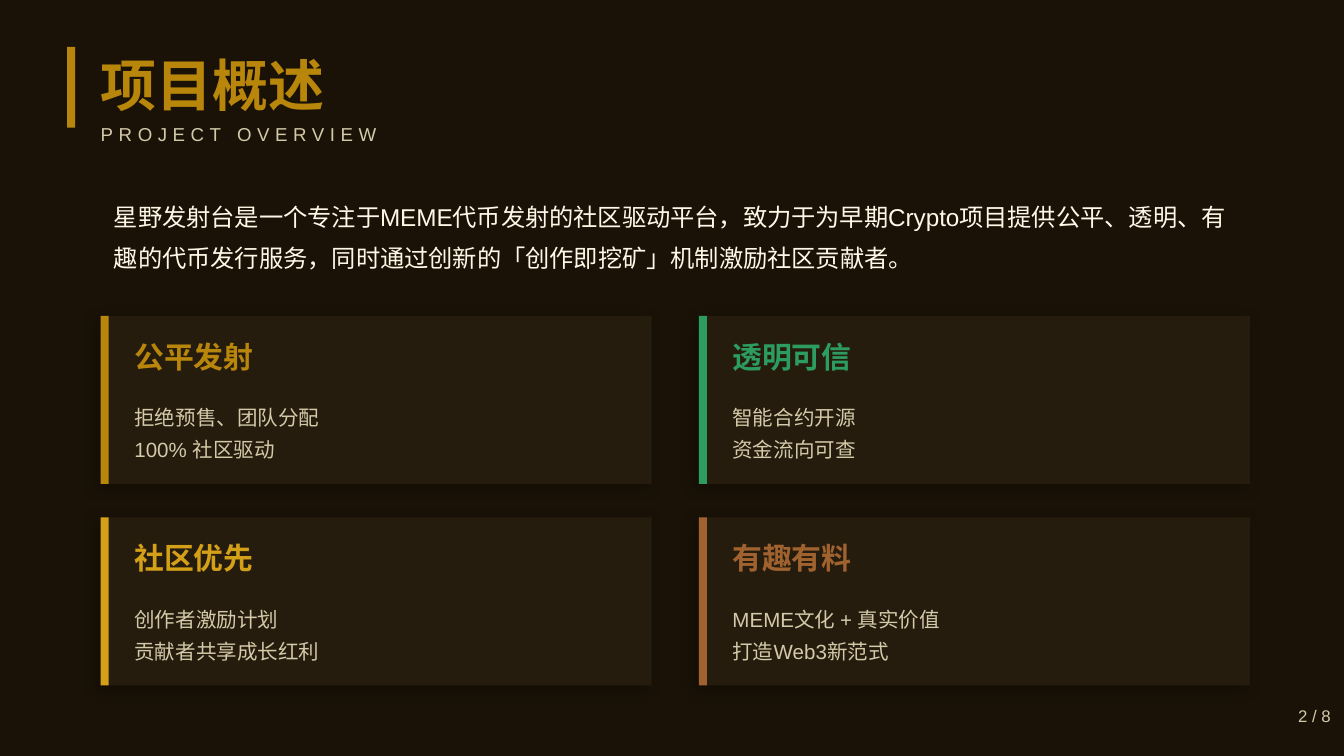
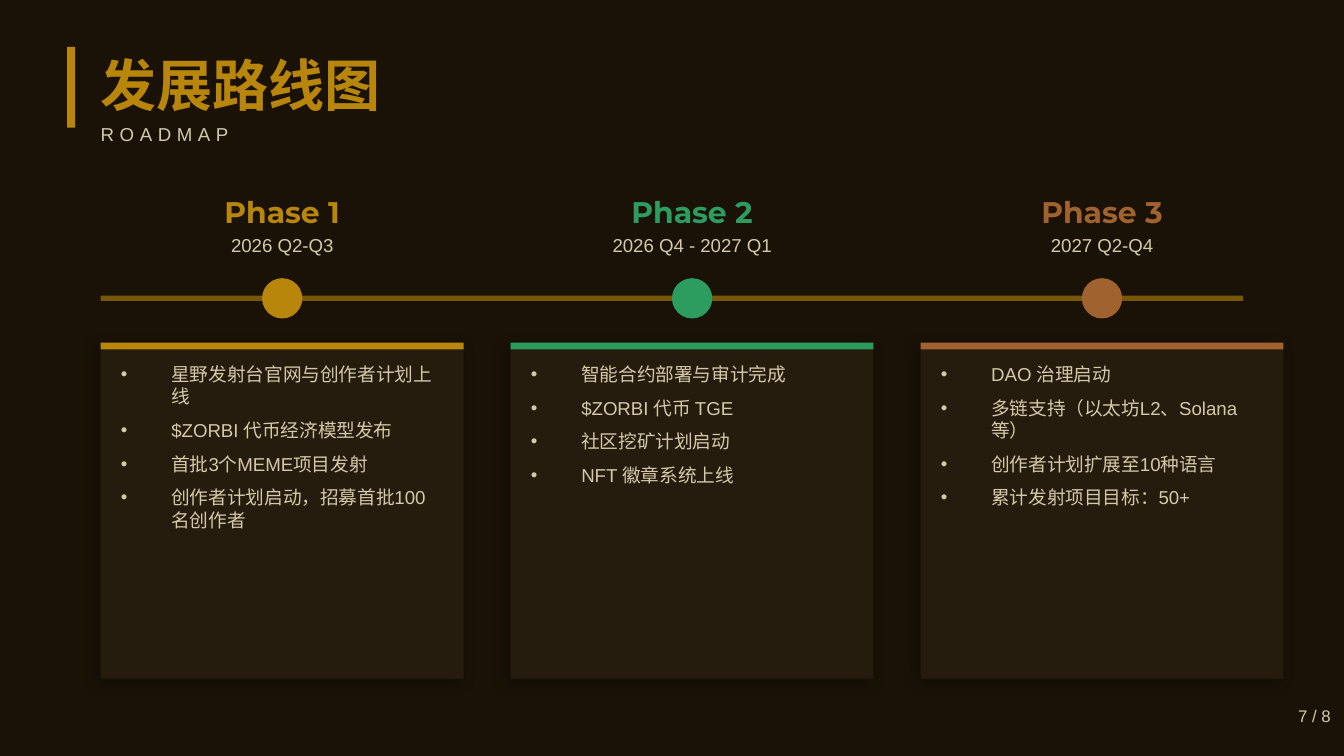
from lxml import etree
from pptx import Presentation
from pptx.dml.color import RGBColor
from pptx.enum.shapes import MSO_SHAPE
from pptx.enum.text import MSO_ANCHOR, MSO_AUTO_SIZE, PP_ALIGN
from pptx.oxml.ns import qn
from pptx.util import Inches, Pt

RECTANGLE, OVAL = MSO_SHAPE.RECTANGLE, MSO_SHAPE.OVAL
TOP, MIDDLE = MSO_ANCHOR.TOP, MSO_ANCHOR.MIDDLE
LEFT, CENTER, RIGHT = PP_ALIGN.LEFT, PP_ALIGN.CENTER, PP_ALIGN.RIGHT
NO_AUTOFIT = MSO_AUTO_SIZE.NONE

COLORS = {
    "background": "1A1207",
    "card": "251C0E",
    "gold": "B8860B",
    "amber": "D4A017",
    "green": "2D9D5F",
    "copper": "A0622E",
    "sand": "D4C9A8",
    "cream": "FFF8E7",
    "shadow": "000000",
}
HEADING_FONT, BODY_FONT = "Montserrat", "Arial"
LEFT_EDGE = 0.75
PAGE_WIDTH = 10


def add_text(page, text, at, size=10, color="sand", font=BODY_FONT, bold=False,
             align=LEFT, anchor=MIDDLE, inset=0, line_spacing=1.0, space_after=0,
             letter_spacing=0, bullet=None, placeholder=None):
    box = placeholder
    if box is None:
        box = page.shapes.add_textbox(0, 0, 0, 0)
    else:
        page.shapes._spTree.append(box._element)
    box.left, box.top, box.width, box.height = [Inches(value) for value in at]
    frame = box.text_frame
    frame.word_wrap = True
    frame.auto_size = NO_AUTOFIT
    frame.vertical_anchor = anchor
    frame.margin_left = frame.margin_right = Inches(inset)
    frame.margin_top = frame.margin_bottom = Inches(inset / 2)
    for index, line in enumerate(text.split("\n")):
        para = frame.paragraphs[0] if index == 0 else frame.add_paragraph()
        if bullet:
            properties = para._p.get_or_add_pPr()
            properties.set("marL", str(Pt(27)))
            properties.set("indent", str(-Pt(27)))
            etree.SubElement(properties, qn("a:buChar"), char=bullet)
        para.alignment = align
        para.line_spacing = line_spacing
        para.space_before = Pt(0)
        para.space_after = Pt(space_after)
        span = para.add_run()
        span.text = line
        span.font.size = Pt(size)
        span.font.name = font
        span.font.bold = bold
        span.font.color.rgb = RGBColor.from_string(COLORS[color])
        if letter_spacing:
            span._r.get_or_add_rPr().set("spc", str(letter_spacing * 100))


def add_block(page, at, color, kind=RECTANGLE, opacity=None, shadow=False):
    block = page.shapes.add_shape(kind, *[Inches(value) for value in at])
    block.fill.solid()
    block.fill.fore_color.rgb = RGBColor.from_string(COLORS[color])
    block.line.fill.background()
    block.shadow.inherit = False
    if opacity:
        fill_color = block._element.spPr.find(".//" + qn("a:srgbClr"))
        etree.SubElement(fill_color, qn("a:alpha"), val=str(opacity * 1000))
    if shadow:
        effects = block._element.spPr.find(qn("a:effectLst"))
        outer = etree.SubElement(effects, qn("a:outerShdw"), blurRad=str(Pt(8)),
                                 dist=str(Pt(3)), dir=str(135 * 60000),
                                 algn="bl", rotWithShape="0")
        shade = etree.SubElement(outer, qn("a:srgbClr"), val=COLORS["shadow"])
        etree.SubElement(shade, qn("a:alpha"), val="30000")


deck = Presentation()
deck.slide_width = Inches(PAGE_WIDTH)
deck.slide_height = Inches(PAGE_WIDTH * 9 / 16)
background = deck.slide_master.background.fill
background.solid()
background.fore_color.rgb = RGBColor.from_string(COLORS["background"])

headers = [
    ("Title Only", "项目概述", "PROJECT OVERVIEW", "2 / 8"),
    ("Comparison", "发展路线图", "ROADMAP", "7 / 8"),
]
pages = []
for layout, title, subtitle, number in headers:
    page = deck.slides.add_slide(deck.slide_layouts.get_by_name(layout))
    add_block(page, (0.5, 0.35, 0.06, 0.6), "gold")
    add_text(page, title, (LEFT_EDGE, 0.3, 4, 0.65), size=30, color="gold",
             font=HEADING_FONT, bold=True, placeholder=page.shapes.title)
    add_text(page, subtitle, (LEFT_EDGE, 0.85, 4, 0.3), letter_spacing=3)
    add_text(page, number, (8.8, 5.15, 1.2, 0.35), size=9, align=RIGHT, inset=0.1)
    pages.append(page)
overview, roadmap = pages

add_text(
    overview,
    "星野发射台是一个专注于MEME代币发射的社区驱动平台，致力于为早期Crypto项目提供公平、透明、"
    "有趣的代币发行服务，同时通过创新的「创作即挖矿」机制激励社区贡献者。",
    (LEFT_EDGE, 1.35, 8.5, 0.75), size=13, color="cream", inset=0.1, line_spacing=1.4)

features = [
    ("公平发射", "拒绝预售、团队分配\n100% 社区驱动", "gold"),
    ("透明可信", "智能合约开源\n资金流向可查", "green"),
    ("社区优先", "创作者激励计划\n贡献者共享成长红利", "amber"),
    ("有趣有料", "MEME文化 + 真实价值\n打造Web3新范式", "copper"),
]
for index, (heading, detail, color) in enumerate(features):
    row, column = divmod(index, 2)
    x = LEFT_EDGE + column * 4.45
    y = 2.35 + row * 1.5
    add_block(overview, (x, y, 4.1, 1.25), "card", shadow=True)
    add_block(overview, (x, y, 0.06, 1.25), color)
    add_text(overview, heading, (x + 0.25, y + 0.1, 3.5, 0.4), size=16,
             color=color, font=HEADING_FONT, bold=True)
    add_text(overview, detail, (x + 0.25, y + 0.55, 3.5, 0.6), size=11,
             line_spacing=1.3)

unused, *list_holders = list(roadmap.placeholders)[1:]
unused._element.getparent().remove(unused._element)
add_block(roadmap, (LEFT_EDGE, 2.2, 8.5, 0.04), "gold", opacity=60)

phases = [
    ("Phase 1", "2026 Q2-Q3", "gold",
     "星野发射台官网与创作者计划上线\n$ZORBI 代币经济模型发布\n"
     "首批3个MEME项目发射\n创作者计划启动，招募首批100名创作者"),
    ("Phase 2", "2026 Q4 - 2027 Q1", "green",
     "智能合约部署与审计完成\n$ZORBI 代币 TGE\n社区挖矿计划启动\nNFT 徽章系统上线"),
    ("Phase 3", "2027 Q2-Q4", "copper",
     "DAO 治理启动\n多链支持（以太坊L2、Solana等）\n"
     "创作者计划扩展至10种语言\n累计发射项目目标：50+"),
]
card_width = 2.7
for index, (phase, period, color, goals) in enumerate(phases):
    x = LEFT_EDGE + index * 3.05
    add_block(roadmap, (x + card_width / 2 - 0.15, 2.07, 0.3, 0.3), color, kind=OVAL)
    add_text(roadmap, phase, (x, 1.4, card_width, 0.35), size=16, color=color,
             font=HEADING_FONT, bold=True, align=CENTER)
    add_text(roadmap, period, (x, 1.7, card_width, 0.25), align=CENTER)
    add_block(roadmap, (x, 2.55, card_width, 2.5), "card", shadow=True)
    add_block(roadmap, (x, 2.55, card_width, 0.05), color)
    add_text(roadmap, goals, (x + 0.15, 2.7, 2.4, 2.2), anchor=TOP, space_after=6,
             bullet="•", placeholder=list_holders[index])

deck.save("out.pptx")
